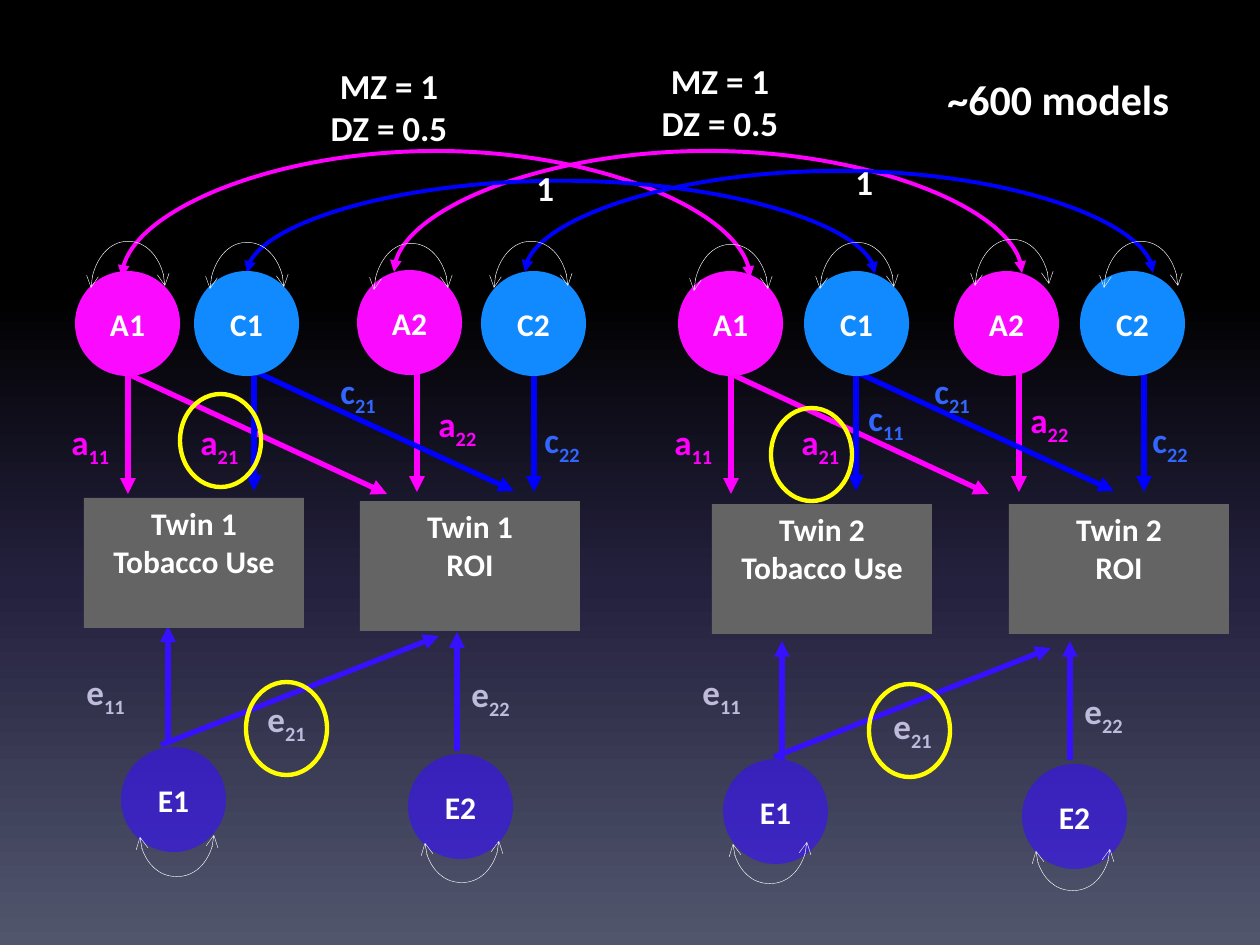
from lxml import etree
from pptx import Presentation
from pptx.dml.color import RGBColor
from pptx.enum.shapes import MSO_CONNECTOR, MSO_SHAPE
from pptx.enum.text import MSO_ANCHOR, PP_ALIGN
from pptx.oxml.ns import qn
from pptx.util import Pt

STRAIGHT, CURVE = MSO_CONNECTOR.STRAIGHT, MSO_CONNECTOR.CURVE
OVAL, RECT = MSO_SHAPE.OVAL, MSO_SHAPE.RECTANGLE
TOP, MIDDLE = MSO_ANCHOR.TOP, MSO_ANCHOR.MIDDLE
LEFT, CENTER = PP_ALIGN.LEFT, PP_ALIGN.CENTER
PX = 914400 / 126


class Theme:
    font = "Calibri"
    white, ring, box = "FFFFFF", "FFFF00", "646464"
    a_path, c_path, e_path = "FF00FF", "0000FF", "3710FF"
    a_node, c_node = "FA0AFF", "118AFF"
    label = {"a": "FF00FF", "c": "3366FF", "e": "BFBBDB"}
    background = [(0, "000000"), (31, "000000"), (62, "24213E"), (100, "51566D")]
    title_size, label_size, node_size = 24, 20, 18


def connect(x1, y1, x2, y2, color, width, tail="triangle", head=None, peak=None):
    """Draw a straight arrow, or an arc whose control line lies at height peak."""
    box = x1, y1, x2, y2
    if peak is not None:
        cx, cy = (x1 + x2) / 2, (y1 + y2) / 2
        w, h = abs(y2 - y1), x2 - x1
        box = cx - w / 2, cy - h / 2, cx + w / 2, cy + h / 2
    cxn = slide.shapes.add_connector(
        STRAIGHT if peak is None else CURVE, *(round(v * PX) for v in box))
    cxn.line.color.rgb = RGBColor.from_string(color)
    cxn.line.width = Pt(width)
    spPr = cxn._element.spPr
    if peak is not None:
        xfrm = spPr.find(qn("a:xfrm"))
        xfrm.set("rot", "5400000")
        xfrm.set("flipV", "1")
        if y2 < y1:
            xfrm.set("flipH", "1")
        geom = spPr.find(qn("a:prstGeom"))
        guides = geom.find(qn("a:avLst"))
        if guides is None:
            guides = etree.SubElement(geom, qn("a:avLst"))
        bend = round((peak - y1) / (y2 - y1) * 100000)
        etree.SubElement(guides, qn("a:gd"), name="adj1", fmla=f"val {bend}")
    ln = spPr.find(qn("a:ln"))
    for end, kind in (("a:headEnd", head), ("a:tailEnd", tail)):
        if kind:
            etree.SubElement(ln, qn(end), type=kind)
    etree.SubElement(spPr, qn("a:effectLst"))


def write(sp, lines, size, color=Theme.white, align=CENTER, anchor=TOP, wrap=True):
    """Fill a shape with text; each line is a list of a run and an optional subscript."""
    tf = sp.text_frame
    tf.word_wrap = wrap
    tf.vertical_anchor = anchor
    for i, runs in enumerate(lines):
        p = tf.add_paragraph() if i else tf.paragraphs[0]
        p.alignment = align
        p.font.name, p.font.size, p.font.bold = Theme.font, Pt(size), True
        p.font.color.rgb = RGBColor.from_string(color)
        for j, text in enumerate(runs):
            r = p.add_run()
            r.text = text
            if j:
                p.line_spacing = 0.9
                r._r.get_or_add_rPr().set("baseline", "-25000")


prs = Presentation()
prs.slide_width, prs.slide_height = round(1260 * PX), round(945 * PX)
slide = prs.slides.add_slide(prs.slide_layouts[6])

# Background gradient, top to bottom
fill = slide.background.fill
fill.gradient()
fill.gradient_angle = 270
stops = slide._element.find(".//" + qn("a:gsLst"))
for gs in list(stops):
    stops.remove(gs)
for pos, color in Theme.background:
    gs = etree.SubElement(stops, qn("a:gs"), pos=str(pos * 1000))
    etree.SubElement(gs, qn("a:srgbClr"), val=color)

# Path arrows
paths = {
    Theme.a_path: [(128, 374, 128, 494), (417, 373, 417, 492), (128, 374, 387, 494),
                   (731, 374, 731, 494), (1019, 373, 1019, 492), (731, 374, 989, 494)],
    Theme.c_path: [(254, 372, 254, 491), (534, 373, 534, 492), (256, 372, 514, 491),
                   (856, 372, 856, 491), (1144, 373, 1144, 492), (856, 372, 1114, 491)],
    Theme.e_path: [(168, 745, 168, 626), (457, 751, 457, 632), (161, 745, 439, 636),
                   (782, 760, 782, 641), (1070, 760, 1070, 641), (774, 757, 1051, 648)],
}
for color, arrows in paths.items():
    for ends in arrows:
        connect(*ends, color, 3)

# Path coefficients
for letter, index, x, y in [
        ("a", "11", 59, 415), ("a", "21", 188, 415), ("a", "22", 426, 397),
        ("c", "21", 328, 364), ("c", "22", 532, 413),
        ("e", "11", 74, 665), ("e", "21", 255, 692), ("e", "22", 459, 667),
        ("a", "11", 662, 415), ("a", "21", 789, 415), ("a", "22", 1018, 393),
        ("c", "11", 856, 391), ("c", "21", 922, 364), ("c", "22", 1140, 413),
        ("e", "11", 690, 665), ("e", "21", 881, 699), ("e", "22", 1072, 684)]:
    sp = slide.shapes.add_textbox(*(round(v * PX) for v in (x, y, 120, 51)))
    write(sp, [[letter, index]], Theme.label_size, Theme.label[letter], LEFT)

# Correlations between the twins
for x, y, peak, color in [(122, 277, 150, Theme.a_path), (394, 272, 150, Theme.a_path),
                          (247, 273, 180, Theme.c_path), (525, 272, 170, Theme.c_path)]:
    connect(x, y, x + 628, y + 1, color, 2.25, head="triangle", peak=peak)

for x, y, w, h, lines, size, align in [
        (309, 58, 160, 97, ["MZ = 1", "DZ = 0.5"], Theme.label_size, CENTER),
        (640, 53, 160, 97, ["MZ = 1", "DZ = 0.5"], Theme.label_size, CENTER),
        (524, 160, 52, 55, ["1"], Theme.label_size, LEFT),
        (843, 154, 43, 55, ["1"], Theme.label_size, LEFT),
        (935, 67, 257, 63, ["~600 models"], Theme.title_size, LEFT)]:
    sp = slide.shapes.add_textbox(*(round(v * PX) for v in (x, y, w, h)))
    write(sp, [[line] for line in lines], size, align=align)

# Observed variables
for x, y, lines in [(84, 498, ["Twin 1", "Tobacco Use"]), (360, 501, ["Twin 1", "ROI"]),
                    (712, 504, ["Twin 2", "Tobacco Use"]), (1009, 504, ["Twin 2", "ROI"])]:
    sp = slide.shapes.add_shape(RECT, *(round(v * PX) for v in (x, y, 220, 130)))
    sp.shadow.inherit = False
    sp.fill.solid()
    sp.fill.fore_color.rgb = RGBColor.from_string(Theme.box)
    sp.line.fill.background()
    write(sp, [[line] for line in lines], Theme.node_size)

# Latent variables
node_fill = {"A": Theme.a_node, "C": Theme.c_node, "E": Theme.e_path}
for name, x, y in [
        ("C1", 194, 271), ("C2", 481, 271), ("C1", 804, 271), ("C2", 1080, 271),
        ("E1", 121, 747), ("E2", 408, 754), ("E1", 723, 759), ("E2", 1022, 764),
        ("A1", 75, 271), ("A2", 357, 270), ("A1", 678, 271), ("A2", 954, 271)]:
    sp = slide.shapes.add_shape(OVAL, *(round(v * PX) for v in (x, y, 105, 105)))
    sp.shadow.inherit = False
    sp.fill.solid()
    sp.fill.fore_color.rgb = RGBColor.from_string(node_fill[name[0]])
    if name[0] == "E":
        clr = sp._element.spPr.find(qn("a:solidFill")).find(qn("a:srgbClr"))
        etree.SubElement(clr, qn("a:alpha"), val="60000")
    sp.line.fill.background()
    write(sp, [[name]], Theme.node_size, anchor=MIDDLE, wrap=False)

# Variance loops: above the A and C circles, below the E circles
above = [(91, 288), (210, 289), (374, 290), (494, 288),
         (694, 291), (820, 289), (975, 286), (1104, 288)]
below = [(140, 837), (425, 843), (733, 844), (1036, 851)]
for loops, rise in ((above, -47), (below, 40)):
    for x, y in loops:
        connect(x, y, x + 74, y - 2, Theme.white, 0.25, "arrow", "arrow", y + rise)

# Highlighted cross paths
for x, y in [(246, 682), (180, 394), (771, 408), (869, 684)]:
    sp = slide.shapes.add_shape(OVAL, *(round(v * PX) for v in (x, y, 81, 93)))
    sp.shadow.inherit = False
    sp.fill.background()
    sp.line.color.rgb = RGBColor.from_string(Theme.ring)
    sp.line.width = Pt(2.5)

prs.save("out.pptx")
